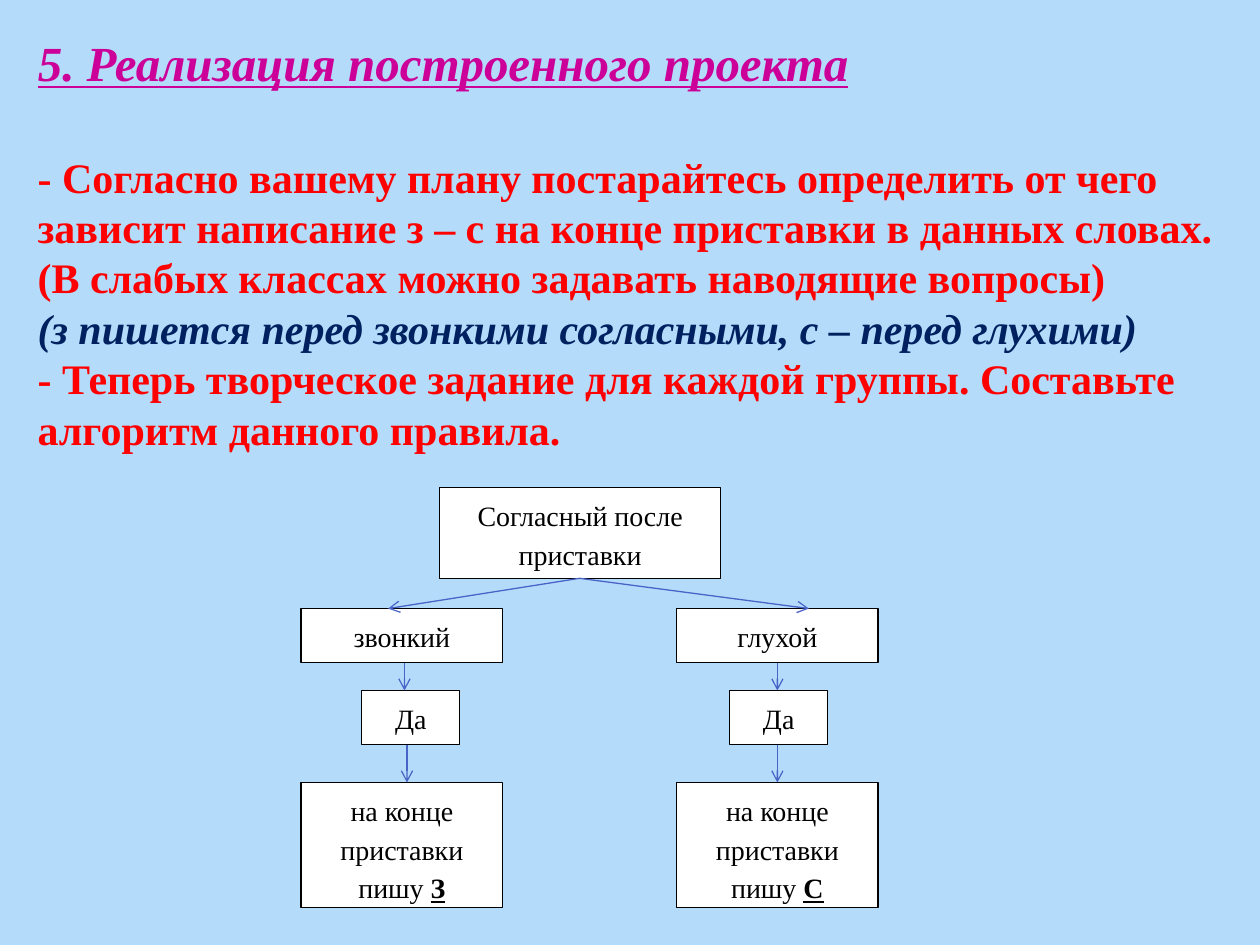
from pptx import Presentation
from pptx.dml.color import RGBColor as RGB
from pptx.enum.shapes import MSO_CONNECTOR as Link, MSO_SHAPE as Shape
from pptx.enum.text import MSO_ANCHOR as Anchor, PP_ALIGN as Align
from pptx.oxml.ns import qn
from pptx.util import Inches, Pt
from lxml.etree import SubElement

THEME = {
    "font": "Times New Roman",
    "back": "B4DCFA", "head": "CC0099", "ask": "FF0000", "reply": "002060",
    "ink": "000000", "box": "FFFFFF", "arrow": "4963C7",
    "head_size": 28, "body_size": 24, "box_size": 16, "line": 0.75,
}

TITLE = "5. Реализация построенного проекта"
BODY = [
    ("ask", "- Согласно вашему плану постарайтесь определить от чего зависит "
            "написание з – с на конце приставки в данных словах. "
            "(В слабых классах можно задавать наводящие вопросы)"),
    ("reply", "(з пишется перед звонкими согласными, с – перед глухими)"),
    ("ask", "- Теперь творческое задание для каждой группы. "
            "Составьте алгоритм данного правила."),
]
ROOT = "Согласный после приставки"
ENDING = "на конце приставки пишу "
# kind of consonant, letter, box left, "Да" left, arrow x: top, middle, bottom
BRANCHES = [
    ("звонкий", "З", 2.39, 2.87, (3.08, 3.21, 3.23)),
    ("глухой", "С", 5.37, 5.79, (6.42, 6.17, 6.17)),
]
# top and height of each row of boxes
ROWS = {"root": (3.87, 0.72), "kind": (4.83, 0.43),
        "yes": (5.48, 0.43), "end": (6.21, 0.99)}
FORK = 4.6


def color(key):
    return RGB.from_string(THEME[key])


def style(font, size, key, **marks):
    font.name, font.size = THEME["font"], Pt(THEME[size])
    font.color.rgb = color(key)
    for name, value in marks.items():
        setattr(font, name, value)


def add_box(slide, row, left, width, text, letter=""):
    """Add a flowchart box; the letter, if any, is bold and underlined."""
    top, height = ROWS[row]
    box = slide.shapes.add_shape(
        Shape.RECTANGLE, *map(Inches, (left, top, width, height)))
    box.shadow.inherit = False
    box.fill.solid()
    box.fill.fore_color.rgb = color("box")
    box.line.color.rgb = color("ink")
    box.line.width = Pt(THEME["line"])
    frame = box.text_frame
    frame.word_wrap, frame.vertical_anchor = True, Anchor.TOP
    para = frame.paragraphs[0]
    para.alignment, para.line_spacing = Align.CENTER, 1.15
    para.space_after = Pt(10)
    style(para.font, "box_size", "ink")
    para.add_run().text = text
    if letter:
        run = para.add_run()
        run.text = letter
        run.font.bold = run.font.underline = True


def add_arrow(slide, start, end, upper, lower):
    """Join the foot of the upper row to the head of the lower one."""
    foot, head = sum(ROWS[upper]), ROWS[lower][0]
    arrow = slide.shapes.add_connector(
        Link.STRAIGHT, *map(Inches, (start, foot, end, head)))
    arrow.line.color.rgb = color("arrow")
    arrow.line.width = Pt(THEME["line"])
    SubElement(arrow.line._get_or_add_ln(), qn("a:tailEnd"), type="arrow")
    SubElement(arrow._element.spPr, qn("a:effectLst"))


def add_words(slide):
    title = slide.shapes.title
    title.left, title.top, title.width, title.height = map(
        Inches, (0.2, 0.21, 9.61, 0.6))
    title.text_frame.text = TITLE
    title.text_frame.vertical_anchor = Anchor.TOP
    para = title.text_frame.paragraphs[0]
    para.alignment = Align.LEFT
    style(para.font, "head_size", "head", bold=True, italic=True, underline=True)

    body = slide.shapes.add_textbox(*map(Inches, (0.2, 1.15, 9.61, 2.53)))
    frame = body.text_frame
    frame.word_wrap = True
    for i, (key, text) in enumerate(BODY):
        para = frame.add_paragraph() if i else frame.paragraphs[0]
        para.text = text
        style(para.font, "body_size", key, bold=True, italic=key == "reply")


def add_chart(slide):
    add_box(slide, "root", 3.49, 2.23, ROOT)
    for kind, letter, left, inner, (top, mid, low) in BRANCHES:
        add_box(slide, "kind", left, 1.6, kind)
        add_box(slide, "yes", inner, 0.78, "Да")
        add_box(slide, "end", left, 1.6, ENDING, letter)
        add_arrow(slide, FORK, top, "root", "kind")
        add_arrow(slide, mid, mid, "kind", "yes")
        add_arrow(slide, low, low, "yes", "end")


def main():
    deck = Presentation()
    deck.slide_width, deck.slide_height = Inches(10), Inches(7.5)
    slide = deck.slides.add_slide(deck.slide_layouts[5])
    slide.background.fill.solid()
    slide.background.fill.fore_color.rgb = color("back")
    add_words(slide)
    add_chart(slide)
    deck.save("out.pptx")


if __name__ == "__main__":
    main()
